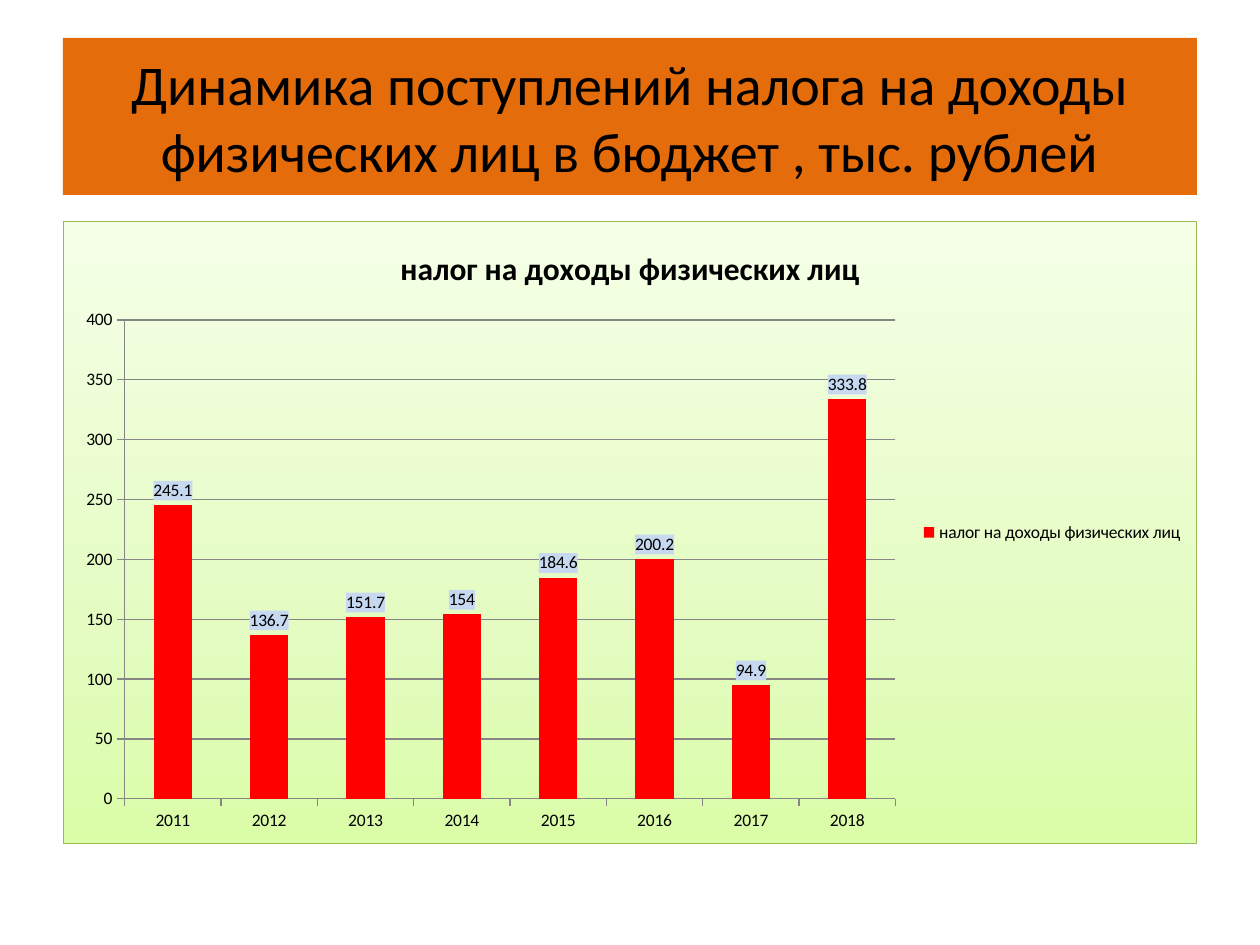
from lxml.etree import fromstring
from pptx import Presentation
from pptx.chart.data import CategoryChartData
from pptx.dml.color import RGBColor
from pptx.enum.chart import (XL_CHART_TYPE, XL_LABEL_POSITION,
                             XL_LEGEND_POSITION, XL_TICK_MARK)
from pptx.enum.shapes import MSO_SHAPE
from pptx.enum.text import MSO_ANCHOR, PP_ALIGN
from pptx.util import Emu, Pt

ORANGE = RGBColor(0xE4, 0x6C, 0x0A)
BLACK = RGBColor(0, 0, 0)
RED = RGBColor(0xFF, 0, 0)
GRAY = RGBColor(0x86, 0x86, 0x86)
GREEN = RGBColor(0x98, 0xB9, 0x55)
BLUE = RGBColor(0xC6, 0xD9, 0xF1)
STOPS = {0: RGBColor(0xDA, 0xFD, 0xA7), 35: RGBColor(0xE4, 0xFC, 0xC2),
         100: RGBColor(0xF5, 0xFF, 0xE7)}
FACE = "Calibri"
HEAD = "Динамика поступлений налога на доходы физических лиц в бюджет , тыс. рублей"
NAME = "налог на доходы физических лиц"
SUMS = (245.1, 136.7, 151.7, 154, 184.6, 200.2, 94.9, 333.8)
SPACE = ('xmlns:c="http://schemas.openxmlformats.org/drawingml/2006/chart" '
         'xmlns:a="http://schemas.openxmlformats.org/drawingml/2006/main"')


def px(*sizes):
    """Turn pixels into EMU at 126 pixels to the inch."""
    return [Emu(round(size * 914400 / 126)) for size in sizes]


def apply(item, **form):
    """Set each format value on an item."""
    for key, value in form.items():
        setattr(item, key, value)


def style(font, size, bold=False):
    """Give a font the face and colour of the slide."""
    apply(font, name=FACE, size=Pt(size), bold=bold)
    font.color.rgb = BLACK


def look(inner):
    """Make a chart format element around fill and line markup."""
    return fromstring(f"<c:spPr {SPACE}>{inner}</c:spPr>")


def solid(color):
    """Give the markup of a plain fill."""
    return f'<a:solidFill><a:srgbClr val="{color}"/></a:solidFill>'


def add_head(slide):
    """Add the orange heading band."""
    band = slide.shapes.add_shape(MSO_SHAPE.RECTANGLE, *px(63, 38, 1134, 157))
    band.shadow.inherit = False
    band.fill.solid()
    band.fill.fore_color.rgb = ORANGE
    band.line.fill.background()
    frame = band.text_frame
    apply(frame, text=HEAD, word_wrap=True, vertical_anchor=MSO_ANCHOR.MIDDLE)
    line = frame.paragraphs[0]
    line.alignment = PP_ALIGN.CENTER
    style(line.runs[0].font, 32)


def paint(chart):
    """Fill the chart with a green fade and a thin border."""
    stops = "".join(f'<a:gs pos="{at * 1000}"><a:srgbClr val="{color}"/></a:gs>'
                    for at, color in STOPS.items())
    fade = (f'<a:gradFill rotWithShape="1"><a:gsLst>{stops}</a:gsLst>'
            '<a:lin ang="16200000" scaled="1"/></a:gradFill>')
    edge = f'<a:ln w="{Pt(0.75)}">{solid(GREEN)}</a:ln>'
    chart.element.chart.addnext(look(fade + edge))


def set_axes(chart):
    """Format both axes and the grid."""
    grid = chart.value_axis
    grid.has_major_gridlines = True
    for axis in (chart.category_axis, grid):
        axis.major_tick_mark = XL_TICK_MARK.OUTSIDE
        axis.format.line.color.rgb = GRAY
    grid.major_gridlines.format.line.color.rgb = GRAY


def set_bars(chart):
    """Format the bars and their value labels."""
    plot = chart.plots[0]
    apply(plot, gap_width=150, vary_by_categories=False)
    bars = plot.series[0]
    bars.format.fill.solid()
    bars.format.fill.fore_color.rgb = RED
    marks = bars.data_labels
    apply(marks, show_value=True, position=XL_LABEL_POSITION.OUTSIDE_END)
    plot.series[0]._element.dLbls.insert(0, look(solid(BLUE)))


def add_bars(slide):
    """Add the column chart of tax by year."""
    data = CategoryChartData()
    data.categories = [str(2011 + step) for step in range(len(SUMS))]
    data.add_series(NAME, SUMS)
    chart = slide.shapes.add_chart(XL_CHART_TYPE.COLUMN_CLUSTERED,
                                   *px(63, 221, 1134, 623), data).chart
    style(chart.font, 10)
    apply(chart, has_title=True, has_legend=True)
    title = chart.chart_title
    title.include_in_layout = False
    title.text_frame.text = NAME
    style(title.text_frame.paragraphs[0].runs[0].font, 18, True)
    apply(chart.legend, position=XL_LEGEND_POSITION.RIGHT,
          include_in_layout=False)
    paint(chart)
    set_axes(chart)
    set_bars(chart)


def main():
    """Build and save the slide."""
    deck = Presentation()
    wide, high = px(1260, 945)
    apply(deck, slide_width=wide, slide_height=high)
    slide = deck.slides.add_slide(deck.slide_layouts[6])
    add_head(slide)
    add_bars(slide)
    deck.save("out.pptx")


if __name__ == "__main__":
    main()
